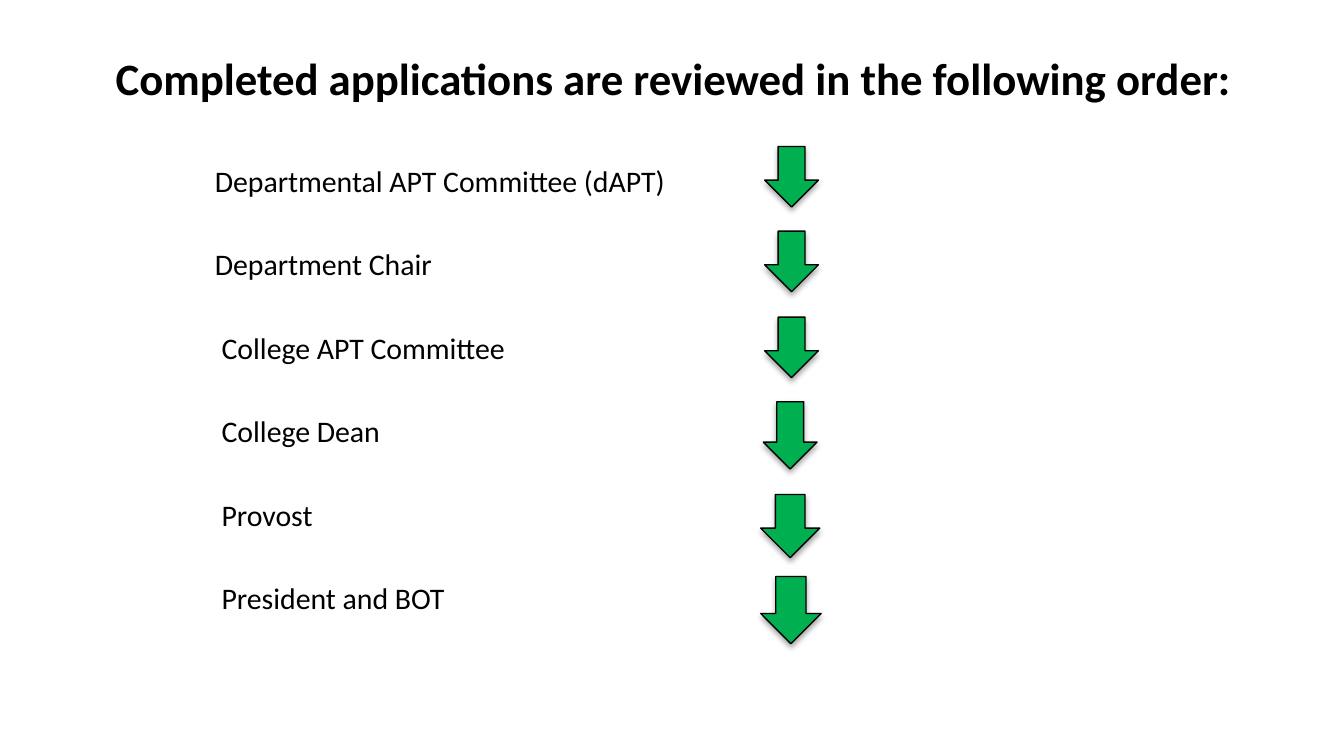
from lxml.etree import SubElement
from pptx import Presentation
from pptx.dml.color import RGBColor
from pptx.enum.shapes import MSO_SHAPE
from pptx.enum.text import MSO_ANCHOR, PP_ALIGN
from pptx.oxml.ns import qn
from pptx.util import Inches, Pt

TITLE = "Completed applications are reviewed in the following order:"
STEPS = [
    ("Departmental APT Committee (dAPT)", 0.42),
    ("Department Chair", 0.42),
    ("College APT Committee", 0.47),
    ("College Dean", 0.47),
    ("Provost", 0.47),
    ("President and BOT", 0.47),
]
ARROWS = [
    (0.03, 0, 0.4, 0.45),
    (0.03, 0.63, 0.4, 0.45),
    (0.03, 1.27, 0.4, 0.45),
    (0.02, 1.9, 0.4, 0.5),
    (0, 2.59, 0.44, 0.47),
    (0, 3.2, 0.45, 0.5),
]


def color(code):
    return RGBColor.from_string(code)


def style(item, form):
    for name, value in form.items():
        setattr(item, name, value)


def write(para, text, size, bold=False):
    run = para.add_run()
    run.text = text
    style(run.font, {"name": "Calibri", "size": Pt(size), "bold": bold})
    run.font.color.rgb = color("000000")


def add_frame(slide, box, anchor):
    frame = slide.shapes.add_textbox(*map(Inches, box)).text_frame
    style(frame, {"word_wrap": True, "vertical_anchor": anchor})
    return frame


def add_title(slide, box):
    para = add_frame(slide, box, MSO_ANCHOR.MIDDLE).paragraphs[0]
    para.alignment = PP_ALIGN.CENTER
    write(para, TITLE, 24, True)


def add_steps(slide, box):
    frame = add_frame(slide, box, MSO_ANCHOR.TOP)
    for i, (text, indent) in enumerate(STEPS):
        para = frame.add_paragraph() if i else frame.paragraphs[0]
        para.space_after = Pt(25.5)
        props = para._p.get_or_add_pPr()
        props.set("marL", str(Inches(indent)))
        props.set("indent", "0")
        write(para, text, 16)


def add_shadow(shape):
    shape.shadow.inherit = False
    effects = shape._element.spPr.find(qn("a:effectLst"))
    outer = SubElement(effects, qn("a:outerShdw"), blurRad=str(Pt(3.1)),
                       dist=str(Pt(1.8)), dir="5400000", rotWithShape="0")
    tint = SubElement(outer, qn("a:srgbClr"), val="000000")
    SubElement(tint, qn("a:alpha"), val="35000")


def add_arrows(slide, left, top):
    for x, y, width, height in ARROWS:
        box = map(Inches, (left + x, top + y, width, height))
        arrow = slide.shapes.add_shape(MSO_SHAPE.DOWN_ARROW, *box)
        arrow.fill.solid()
        arrow.fill.fore_color.rgb = color("00B050")
        arrow.line.color.rgb = color("000000")
        arrow.line.width = Pt(0.75)
        add_shadow(arrow)


def main():
    deck = Presentation()
    wide = Inches(10)
    style(deck, {"slide_width": wide, "slide_height": wide * 9 // 16})
    slide = deck.slides.add_slide(deck.slide_layouts[6])
    add_title(slide, (0.23, 0.14, 9.56, 0.88))
    add_steps(slide, (1.08, 1.16, 6.82, 4))
    add_arrows(slide, 5.66, 1.09)
    deck.save("out.pptx")


if __name__ == "__main__":
    main()
